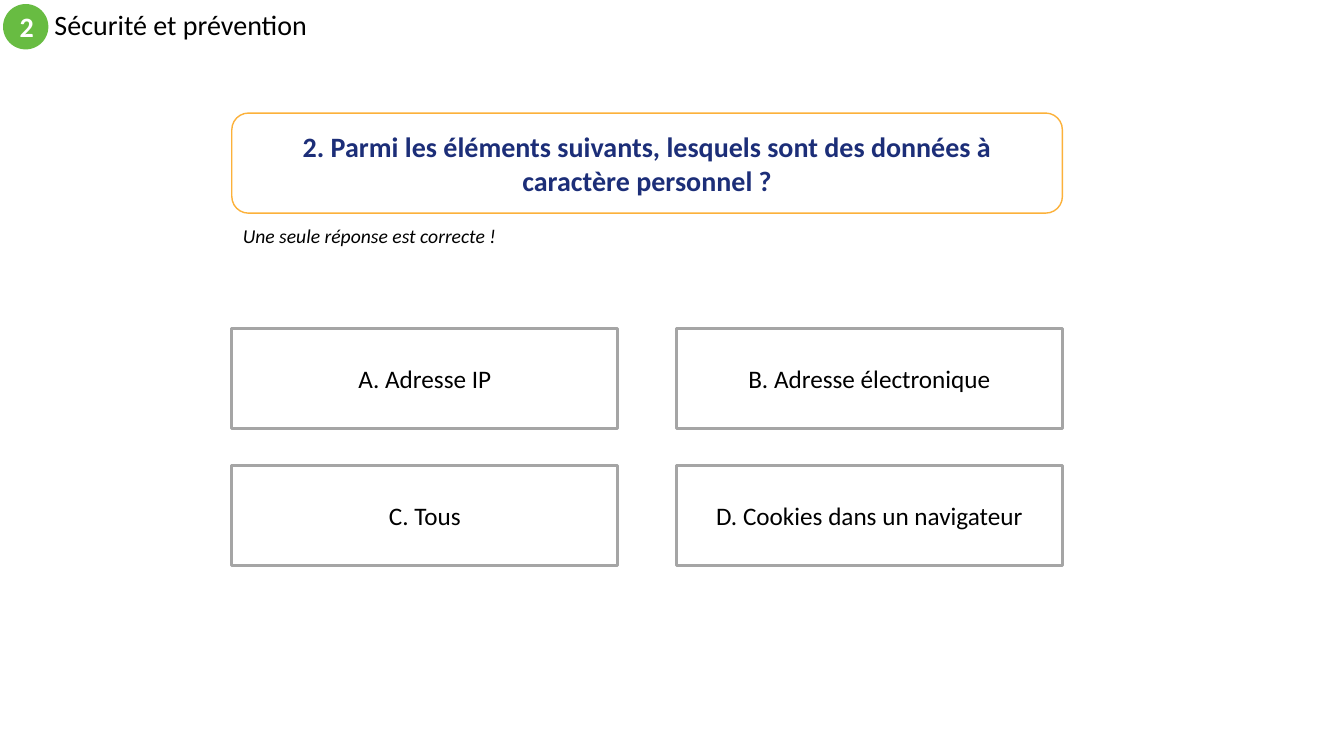
"""Build the quiz slide on personal data."""
import dataclasses

import pptx
import pptx.dml.color
import pptx.enum.shapes
import pptx.enum.text
import pptx.util

Pt = pptx.util.Pt
Color = pptx.dml.color.RGBColor.from_string
Shape = pptx.enum.shapes.MSO_SHAPE
Align = pptx.enum.text.PP_ALIGN
Anchor = pptx.enum.text.MSO_ANCHOR


@dataclasses.dataclass(frozen=True)
class Theme:
    font: str = "Calibri"
    black: str = "000000"
    white: str = "FFFFFF"
    green: str = "68BC42"
    orange: str = "FCB13A"
    navy: str = "1C2E78"
    gray: str = "A5A5A5"
    heading: int = 20
    answer: int = 18
    hint: int = 14


theme = Theme()


def write(box, text, *, size, color=theme.black, bold=False, italic=False,
          align=Align.CENTER, anchor=Anchor.MIDDLE, spacing=None):
    frame = box.text_frame
    frame.word_wrap = True
    frame.auto_size = pptx.enum.text.MSO_AUTO_SIZE.NONE
    frame.vertical_anchor = anchor
    frame.margin_left = frame.margin_right = Pt(7.2)
    frame.margin_top = frame.margin_bottom = Pt(3.6)
    para = frame.paragraphs[0]
    para.alignment = align
    para.space_before = Pt(0)
    para.line_spacing = spacing
    span = para.add_run()
    span.text = text
    span.font.name = theme.font
    span.font.size = Pt(size)
    span.font.bold = bold
    span.font.italic = italic
    span.font.color.rgb = Color(color)


def add_panel(page, kind, left, top, width, height, *, fill, line=None, weight=1):
    panel = page.shapes.add_shape(kind, Pt(left), Pt(top), Pt(width), Pt(height))
    panel.shadow.inherit = False
    panel.fill.solid()
    panel.fill.fore_color.rgb = Color(fill)
    if line:
        panel.line.color.rgb = Color(line)
        panel.line.width = Pt(weight)
    else:
        panel.line.fill.background()
    return panel


deck = pptx.Presentation()
deck.slide_width, deck.slide_height = Pt(960), Pt(540)
page = deck.slides.add_slide(deck.slide_layouts[5])

badge = add_panel(page, Shape.OVAL, 2.16, 2.88, 32.4, 32.4, fill=theme.green)
write(badge, "2", size=theme.heading, color=theme.white, bold=True)

title = page.shapes.title
title.left, title.top, title.width, title.height = Pt(31.68), Pt(2.88), Pt(576), Pt(32.4)
write(title, "Sécurité et prévention", size=theme.heading, align=Align.LEFT, spacing=0.9)

left, panel_height = 165.6, 71.5
question = add_panel(page, Shape.ROUNDED_RECTANGLE, left, 80.8, 593.3, panel_height,
                     fill=theme.white, line=theme.orange)
write(question, "2. Parmi les éléments suivants, lesquels sont des données à caractère personnel ?",
      size=theme.heading, color=theme.navy, bold=True)

hint = page.shapes.add_textbox(Pt(166.3), Pt(156.2), Pt(226.8), Pt(24.5))
write(hint, "Une seule réponse est correcte !", size=theme.hint, italic=True,
      align=Align.LEFT, anchor=Anchor.TOP)

answers = ["A. Adresse IP", "B. Adresse électronique", "C. Tous", "D. Cookies dans un navigateur"]
for index, answer in enumerate(answers):
    row, column = divmod(index, 2)
    choice = add_panel(page, Shape.RECTANGLE, left + column * 317.5, 234.5 + row * 98.2,
                       275.8, panel_height, fill=theme.white, line=theme.gray, weight=2)
    write(choice, answer, size=theme.answer)

deck.save("out.pptx")
